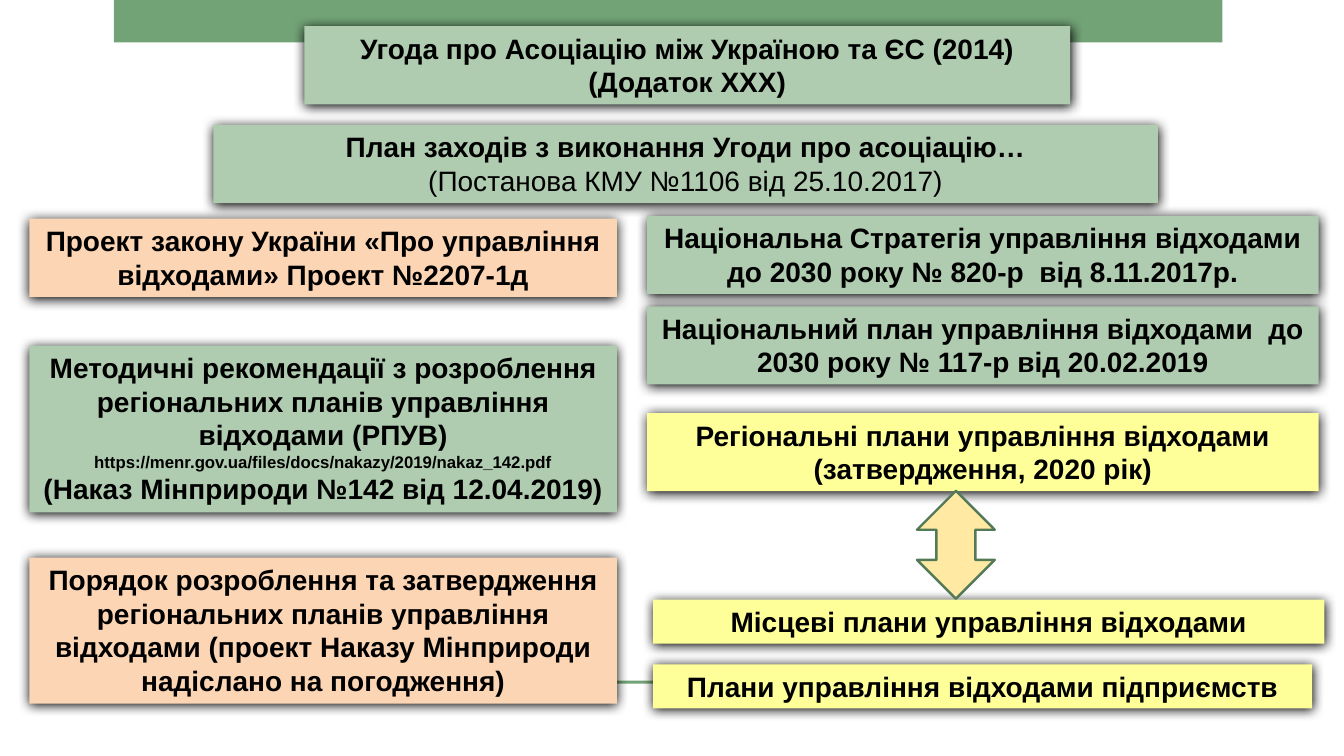
from dataclasses import dataclass

from lxml import etree
from pptx import Presentation
from pptx.dml.color import RGBColor as RGB
from pptx.enum.shapes import MSO_SHAPE as SHAPE
from pptx.enum.text import MSO_ANCHOR as ANCHOR, MSO_AUTO_SIZE as AUTO, PP_ALIGN as ALIGN
from pptx.oxml.ns import qn
from pptx.util import Cm, Pt


@dataclass(frozen=True)
class Theme:
    font: str = "Arial"
    text: str = "000000"
    band: str = "72A376"
    adopted: str = "B0CCB0"
    draft: str = "FCD5B5"
    plan: str = "FFFF99"
    arrow: str = "FFE9A3"
    arrow_line: str = "547957"
    body: int = 20
    link: int = 12


class SlideBuilder:
    def __init__(self, slide, theme):
        self.s = slide
        self.theme = theme

    def shape(self, kind, x, y, w, h, fill):
        """Add a flat filled shape; lengths are in centimetres."""
        sp = self.s.shapes.add_shape(kind, Cm(x), Cm(y), Cm(w), Cm(h))
        sp.fill.solid()
        sp.fill.fore_color.rgb = RGB.from_string(fill)
        sp.line.fill.background()
        sp.shadow.inherit = False
        return sp

    def band(self, y, h):
        self.shape(SHAPE.RECTANGLE, 2.87, y, 27.94, h, self.theme.band)

    def soft_shadow(self, sp):
        effects = sp.element.spPr.find(qn("a:effectLst"))
        shadow = etree.SubElement(
            effects, qn("a:outerShdw"), blurRad=str(Pt(8.5)), dist=str(Pt(1)),
            dir="5400000", algn="ctr", rotWithShape="0")
        etree.SubElement(shadow, qn("a:srgbClr"), val="000000")

    def style_run(self, r, size=None, bold=True):
        f = r.font
        f.name, f.size, f.bold = self.theme.font, Pt(size or self.theme.body), bold
        f.color.rgb = RGB.from_string(self.theme.text)

    def box(self, x, y, w, h, fill, *lines):
        """Add a shadowed box with one centred bold paragraph per line."""
        sp = self.shape(SHAPE.RECTANGLE, x, y, w, h, fill)
        self.soft_shadow(sp)
        tf = sp.text_frame
        tf.text = "\n".join(lines)
        tf.word_wrap = True
        tf.auto_size = AUTO.SHAPE_TO_FIT_TEXT
        tf.vertical_anchor = ANCHOR.TOP
        for p in tf.paragraphs:
            p.alignment = ALIGN.CENTER
            for r in p.runs:
                self.style_run(r)
        return tf

    def up_down_arrow(self, x, y, w, h):
        sp = self.shape(SHAPE.UP_DOWN_ARROW, x, y, w, h, self.theme.arrow)
        sp.adjustments[0], sp.adjustments[1] = 0.49, 0.5
        sp.line.color.rgb = RGB.from_string(self.theme.arrow_line)
        sp.line.width = Pt(1.75)


def main():
    prs = Presentation()
    prs.slide_width, prs.slide_height = Cm(33.87), Cm(19.05)
    t = Theme()
    b = SlideBuilder(prs.slides.add_slide(prs.slide_layouts[6]), t)
    left, left_w = 0.74, 14.81
    right, right_w = 16.31, 16.92
    local = 16.46
    one_line, two_lines = 1.11, 1.97

    # Page bands
    b.band(0, 1.07)
    b.band(17.15, 0.08)

    # International agreement and action plan
    tf = b.box(5.38, 3.15, 23.8, two_lines, t.adopted,
               "План заходів з виконання Угоди про асоціацію…",
               "(Постанова КМУ №1106 від 25.10.2017)")
    b.style_run(tf.paragraphs[1].runs[0], bold=False)
    b.box(7.67, 0.66, 19.3, two_lines, t.adopted,
          "Угода про Асоціацію між Україною та ЄС (2014) (Додаток XXX)")

    # Left column: law, guidelines and procedure
    b.box(left, 5.51, left_w, two_lines, t.draft,
          "Проект закону України «Про управління відходами» Проект №2207-1д")
    tf = b.box(left, 8.71, left_w, 4.2, t.adopted,
               "Методичні рекомендації з розроблення регіональних планів "
               "управління відходами (РПУВ) ",
               "(Наказ Мінприроди №142 від 12.04.2019)")
    r = tf.paragraphs[0].add_run()
    r.text = "https://menr.gov.ua/files/docs/nakazy/2019/nakaz_142.pdf"
    b.style_run(r, t.link)
    b.box(left, 14.05, left_w, 3.68, t.draft,
          "Порядок розроблення та затвердження регіональних планів управління "
          "відходами (проект Наказу Мінприроди надіслано на погодження)")

    # Right column: national, regional and local plans
    for x, y, w, h, fill, text in (
        (right, 7.72, right_w, two_lines, t.adopted,
         "Національний план управління відходами  до 2030 року № 117-р від 20.02.2019"),
        (right, 5.44, right_w, two_lines, t.adopted,
         "Національна Стратегія управління відходами до 2030 року № 820-р  від 8.11.2017р."),
        (right, 10.41, right_w, two_lines, t.plan,
         "Регіональні плани управління відходами (затвердження, 2020 рік)"),
        (local, 15.11, right_w, one_line, t.plan, "Місцеві плани управління відходами"),
        (local, 16.74, 16.61, one_line, t.plan, "Плани управління відходами підприємств"),
    ):
        b.box(x, y, w, h, fill, text)

    # Link between regional and local plans
    b.up_down_arrow(23.11, 12.37, 1.96, 2.72)

    prs.save("out.pptx")


if __name__ == "__main__":
    main()
